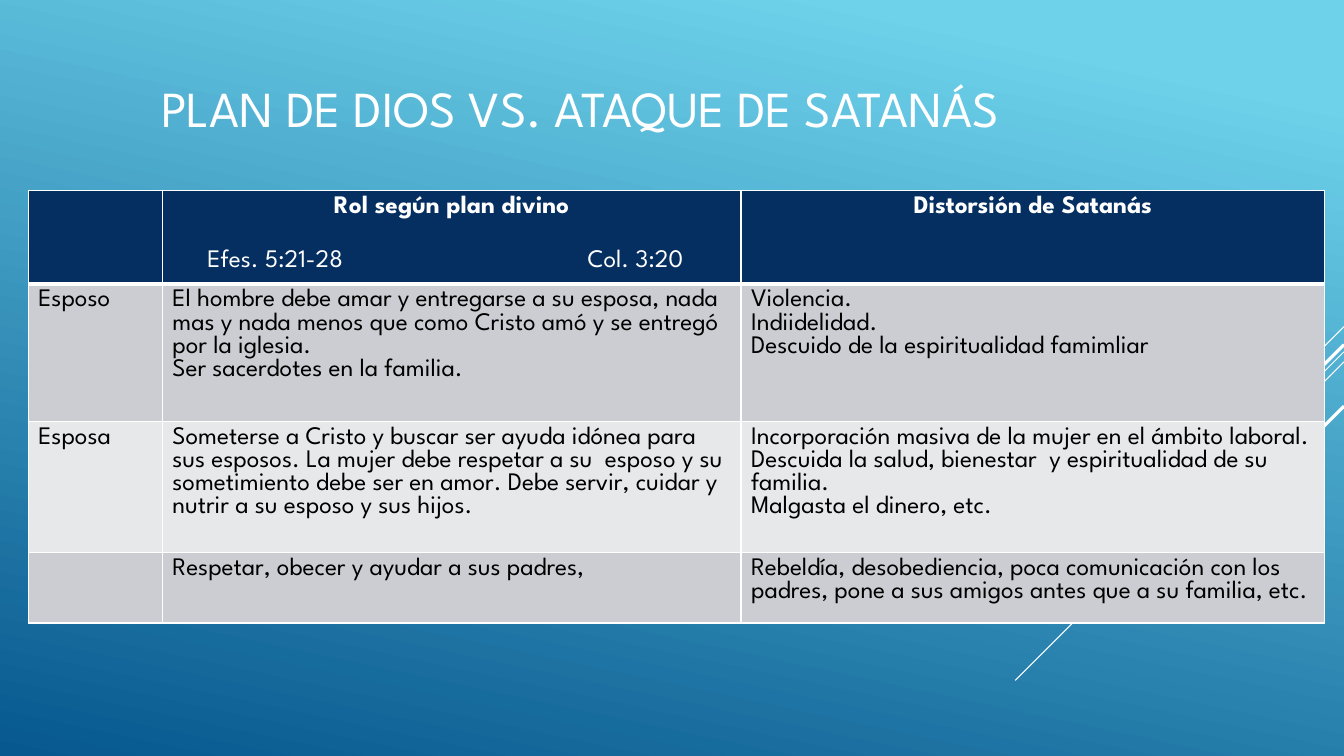
from lxml import etree
from pptx import Presentation
from pptx import util as u
from pptx.dml.color import RGBColor
from pptx.enum import shapes, text
from pptx.oxml import ns

EMU_PER_PX = 9144  # 100 px to the inch
FONT = "League Spartan"
WHITE, BLACK, NAVY = "FFFFFF", "000000", "052F61"
BAND_FILLS = ("CCCDD2", "E7E8EA")

# start x, start y, end x, end y, width in points
DIAGONALS = [
    (1333, 324, 1233, 424, 0.75),
    (1333, 349, 1007, 675, 0.75),
    (1333, 359, 1126, 567, 0.75),
    (1333, 342, 1142, 533, 2.25),
    (1333, 403, 1194, 542, 2.25),
]

COLUMN_WIDTHS = (133, 574, 579)
ROW_HEIGHTS = (93, 136, 93, 42)
ROLES = [
    [[], ["Rol según plan divino"], ["Distorsión de Satanás"]],
    [
        ["Esposo"],
        ["El hombre debe amar y entregarse a su esposa, nada mas y nada menos "
         "que como Cristo amó y se entregó por la iglesia.",
         "Ser sacerdotes en la familia."],
        ["Violencia.", "Indiidelidad.", "Descuido de la espiritualidad famimliar"],
    ],
    [
        ["Esposa"],
        ["Someterse a Cristo y buscar ser ayuda idónea para sus esposos. "
         "La mujer debe respetar a su  esposo y su sometimiento debe ser en amor. "
         "Debe servir, cuidar y nutrir a su esposo y sus hijos."],
        ["Incorporación masiva de la mujer en el ámbito laboral.",
         "Descuida la salud, bienestar  y espiritualidad de su familia.",
         "Malgasta el dinero, etc."],
    ],
    [
        [],
        ["Respetar, obecer y ayudar a sus padres,"],
        ["Rebeldía, desobediencia, poca comunicación con los padres, "
         "pone a sus amigos antes que a su familia, etc."],
    ],
]


def px(length):
    return u.Emu(length * EMU_PER_PX)


def color(hex_string):
    return RGBColor.from_string(hex_string)


def add_run(paragraph, words, size, hex_string, bold=False):
    run = paragraph.add_run()
    run.text = words
    run.font.name = FONT
    run.font.size = u.Pt(size)
    run.font.bold = bold
    run.font.color.rgb = color(hex_string)


def paint_background(slide):
    fill = slide.background.fill
    fill.gradient()
    fill.gradient_angle = 258
    stops = ((0.1, "6ED2EB"), (1, "06588E"))
    for stop, (position, hex_string) in zip(fill.gradient_stops, stops):
        stop.position = position
        stop.color.rgb = color(hex_string)


def add_line(slide, start_x, start_y, end_x, end_y, width):
    line = slide.shapes.add_connector(
        shapes.MSO_CONNECTOR.STRAIGHT, px(start_x), px(start_y), px(end_x), px(end_y))
    line.line.color.rgb = color(WHITE)
    line.line.width = u.Pt(width)
    etree.SubElement(line._element.spPr, ns.qn("a:effectLst"))


def add_text(slide, left, top, width, height, words, size, wrap=False):
    box = slide.shapes.add_textbox(px(left), px(top), px(width), px(height))
    frame = box.text_frame
    frame.word_wrap = wrap
    frame.vertical_anchor = text.MSO_ANCHOR.MIDDLE if wrap else text.MSO_ANCHOR.TOP
    add_run(frame.paragraphs[0], words, size, WHITE)


def add_borders(cell, top, bottom):
    """Draw white cell borders; top and bottom are widths in points."""
    properties = cell._tc.get_or_add_tcPr()
    for side, width in (("L", 1), ("R", 1), ("T", top), ("B", bottom)):
        border = etree.SubElement(properties, ns.qn(f"a:ln{side}"), w=str(u.Pt(width)))
        fill = etree.SubElement(border, ns.qn("a:solidFill"))
        etree.SubElement(fill, ns.qn("a:srgbClr"), val=WHITE)


def fill_cell(cell, lines, row):
    is_header = row == 0
    add_borders(cell, top=3 if row == 1 else 1, bottom=3 if is_header else 1)
    cell.fill.solid()
    cell.fill.fore_color.rgb = color(NAVY if is_header else BAND_FILLS[(row - 1) % 2])
    frame = cell.text_frame
    for index, line in enumerate(lines):
        paragraph = frame.add_paragraph() if index else frame.paragraphs[0]
        if is_header:
            paragraph.alignment = text.PP_ALIGN.CENTER
        add_run(paragraph, line, 18, WHITE if is_header else BLACK, bold=is_header)


def add_roles_table(slide, left, top):
    table = slide.shapes.add_table(
        len(ROW_HEIGHTS), len(COLUMN_WIDTHS), px(left), px(top),
        px(sum(COLUMN_WIDTHS)), px(sum(ROW_HEIGHTS))).table
    for column, width in zip(table.columns, COLUMN_WIDTHS):
        column.width = px(width)
    for row, height in enumerate(ROW_HEIGHTS):
        table.rows[row].height = px(height)
        for column, lines in enumerate(ROLES[row]):
            fill_cell(table.cell(row, column), lines, row)


def main():
    presentation = Presentation()
    presentation.slide_width = px(1333)
    presentation.slide_height = px(750)
    slide = presentation.slides.add_slide(presentation.slide_layouts[6])
    paint_background(slide)
    for diagonal in DIAGONALS:
        add_line(slide, *diagonal)
    add_text(slide, 150, 24, 933, 165, "PLAN DE DIOS VS. ATAQUE DE SATANÁS", 36, wrap=True)
    add_roles_table(slide, 28, 189)
    add_text(slide, 196, 235, 167, 40, "Efes. 5:21-28", 18)
    add_text(slide, 573, 235, 125, 40, "Col. 3:20", 18)
    presentation.save("out.pptx")


if __name__ == "__main__":
    main()
